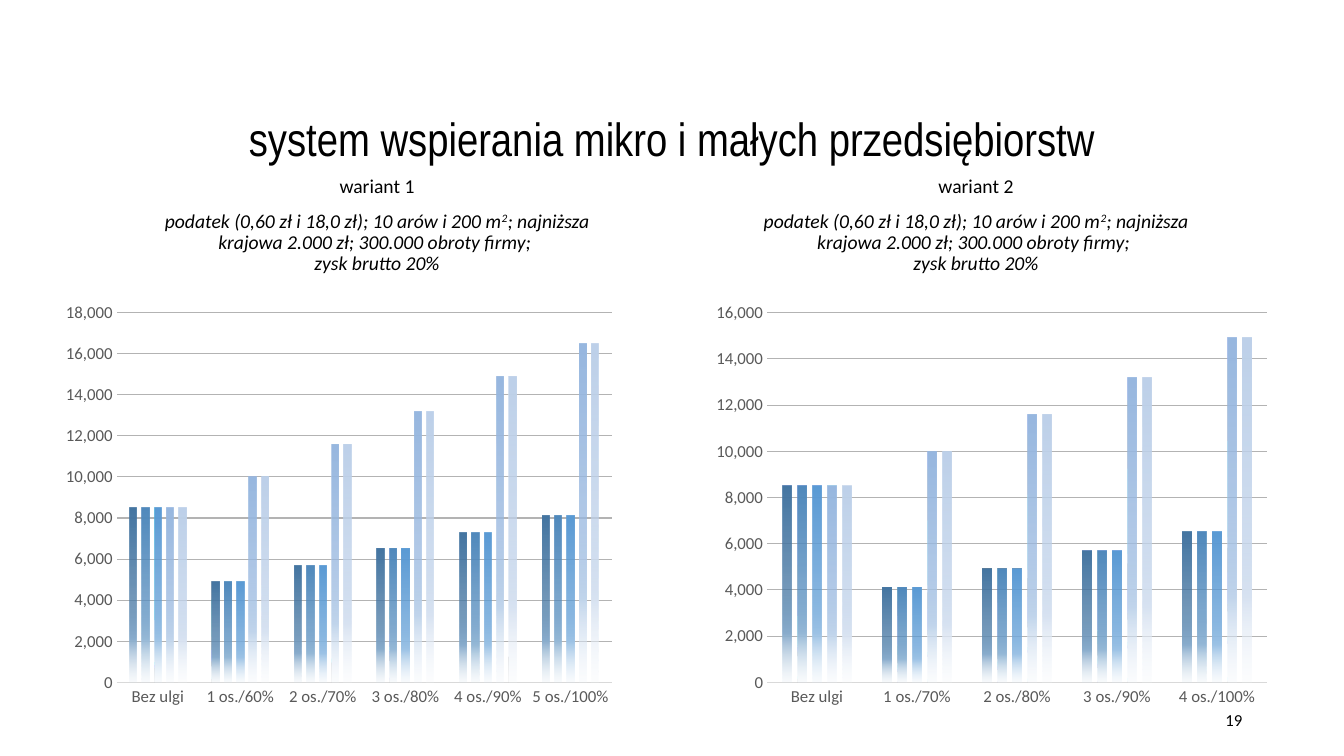
"""Builds a slide comparing two tax relief variants for small companies."""
from lxml import etree
from pptx import Presentation
from pptx.chart.data import CategoryChartData
from pptx.dml.color import RGBColor
from pptx.enum.chart import XL_CHART_TYPE, XL_TICK_MARK
from pptx.enum.text import MSO_ANCHOR, PP_ALIGN
from pptx.oxml.ns import qn
from pptx.util import Inches, Pt

CLUSTERED = XL_CHART_TYPE.COLUMN_CLUSTERED
NO_TICK = XL_TICK_MARK.NONE
TOP, MIDDLE, BOTTOM = MSO_ANCHOR.TOP, MSO_ANCHOR.MIDDLE, MSO_ANCHOR.BOTTOM
CENTER, RIGHT = PP_ALIGN.CENTER, PP_ALIGN.RIGHT
BLACK, AXIS_TEXT, AXIS_LINE, GRID = "000000", "595959", "D9D9D9", "B3B3B3"
GRADIENTS = [
    ("4576A2", "8AADCD", "D8E4EE"),
    ("518ABD", "96B9D7", "DCE8F2"),
    ("5B9BD5", "9DC3E6", "DEEBF7"),
    ("98B8E0", "C1D5EC", "EAF1F9"),
    ("BED1EA", "D8E3F2", "F2F6FB"),
]
VARIANTS = [
    {
        "title": "wariant 1", "text_left": 1.53, "chart_left": 0.54, "chart_width": 5.64,
        "categories": ["Bez ulgi", "1 os./60%", "2 os./70%", "3 os./80%", "4 os./90%", "5 os./100%"],
        "low": [8500, 4900, 5700, 6500, 7300, 8100],
        "high": [8500, 10000, 11600, 13200, 14900, 16500],
        "maximum": 18000,
    },
    {
        "title": "wariant 2", "text_left": 7.47, "chart_left": 6.99, "chart_width": 5.69,
        "categories": ["Bez ulgi", "1 os./70%", "2 os./80%", "3 os./90%", "4 os./100%"],
        "low": [8500, 4100, 4900, 5700, 6500],
        "high": [8500, 10000, 11600, 13200, 14900],
        "maximum": 16000,
    },
]

presentation = Presentation()
presentation.slide_width = Inches(13.33)
presentation.slide_height = Inches(7.5)
slide = presentation.slides.add_slide(presentation.slide_layouts[6])


def set_font(font, size, color, name="Calibri"):
    font.size, font.name = Pt(size), name
    font.color.rgb = RGBColor.from_string(color)


def add_text(left, top, width, height, anchor, alignment, text, size, name="Calibri"):
    frame = slide.shapes.add_textbox(
        Inches(left), Inches(top), Inches(width), Inches(height)).text_frame
    frame.word_wrap = True
    frame.vertical_anchor = anchor
    paragraph = frame.paragraphs[0]
    paragraph.alignment = alignment
    paragraph.line_spacing = 0.9
    run = paragraph.add_run()
    run.text = text
    set_font(run.font, size, BLACK, name)
    return frame


add_text(9.42, 6.95, 3, 0.4, MIDDLE, RIGHT, "19", 12)
add_text(2.17, 1.03, 9, 0.67, BOTTOM, CENTER,
         "system wspierania mikro i małych przedsiębiorstw", 33.3, "Arial Narrow")

for variant in VARIANTS:
    frame = add_text(variant["text_left"], 1.7, 4.42, 1.14, TOP, CENTER, variant["title"], 14)
    frame.paragraphs[0].space_before = Pt(10)
    paragraph = frame.add_paragraph()
    paragraph.alignment = CENTER
    paragraph.line_spacing = 0.9
    paragraph.space_before = Pt(10)
    for text, baseline in [
        ("podatek (0,60 zł i 18,0 zł); 10 arów i 200 m", 0),
        ("2", 30000),
        ("; najniższa krajowa 2.000 zł; 300.000 obroty firmy; ", 0),
        ("zysk brutto 20%", 0),
    ]:
        if text.startswith("zysk"):
            paragraph.add_line_break()
        run = paragraph.add_run()
        run.text = text
        run.font.italic = True
        set_font(run.font, 14, BLACK)
        if baseline:
            run.font._element.set("baseline", str(baseline))

    chart_data = CategoryChartData(number_format="#,##0")
    chart_data.categories = variant["categories"]
    for number in range(1, 6):
        chart_data.add_series(f"Series {number}", variant["low" if number <= 3 else "high"])
    chart = slide.shapes.add_chart(
        CLUSTERED, Inches(variant["chart_left"]), Inches(2.92),
        Inches(variant["chart_width"]), Inches(4.17), chart_data).chart
    chart.has_legend = False
    chart.has_title = False
    set_font(chart.font, 10, BLACK)

    for axis in (chart.category_axis, chart.value_axis):
        axis.major_tick_mark = axis.minor_tick_mark = NO_TICK
        set_font(axis.tick_labels.font, 12, AXIS_TEXT)
    category_line = chart.category_axis.format.line
    category_line.width = Pt(0.75)
    category_line.color.rgb = RGBColor.from_string(AXIS_LINE)
    value_axis = chart.value_axis
    value_axis.format.line.fill.background()
    value_axis.minimum_scale, value_axis.maximum_scale = 0, variant["maximum"]
    value_axis.major_unit = 2000
    value_axis.tick_labels.number_format = "#,##0"
    value_axis.tick_labels.number_format_is_linked = False
    grid_line = value_axis.major_gridlines.format.line
    grid_line.width = Pt(0.75)
    grid_line.color.rgb = RGBColor.from_string(GRID)

    plot = chart.plots[0]
    plot.vary_by_categories = False
    plot.gap_width = 355
    plot.overlap = -70
    for series, (base, light, pale) in zip(plot.series, GRADIENTS):
        series.invert_if_negative = False
        gradient = etree.Element(qn("a:gradFill"), rotWithShape="1")
        stops = etree.SubElement(gradient, qn("a:gsLst"))
        for position, color, alpha in [(0, base, 100), (51, base, 75), (75, light, 100), (100, pale, 15)]:
            stop = etree.SubElement(stops, qn("a:gs"), pos=str(position * 1000))
            stop_color = etree.SubElement(stop, qn("a:srgbClr"), val=color)
            if alpha < 100:
                etree.SubElement(stop_color, qn("a:alpha"), val=str(alpha * 1000))
        etree.SubElement(gradient, qn("a:lin"), ang="5400000", scaled="0")
        series._element.get_or_add_spPr().insert(0, gradient)

presentation.save("out.pptx")
